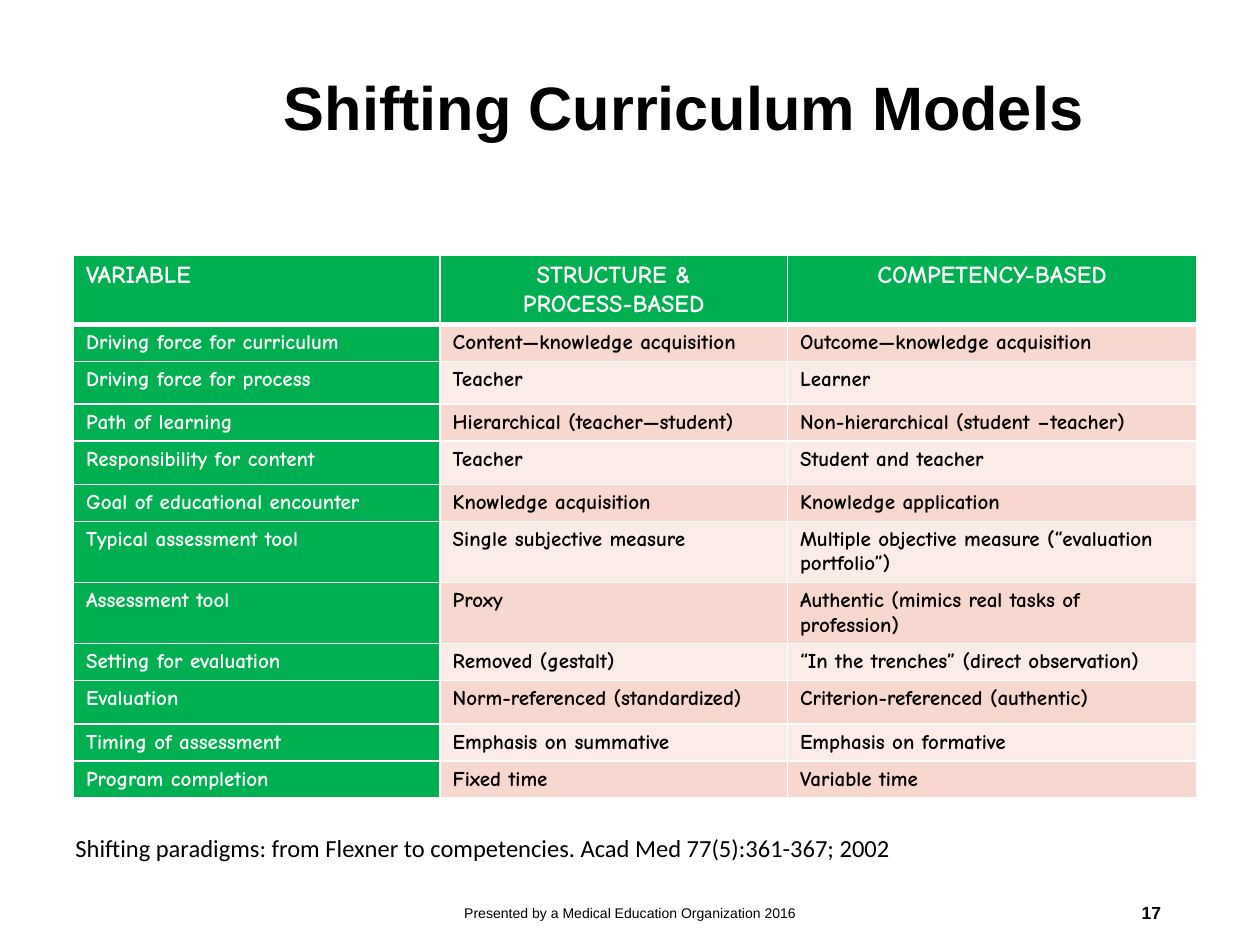
from lxml import etree
from pptx import Presentation
from pptx import util as u
from pptx.dml.color import RGBColor
from pptx.enum import text
from pptx.oxml.ns import qn

Pt = u.Pt
GREEN, WHITE, BLACK = "00B050", "FFFFFF", "000000"
BANDS = ["F8D7CE", "FCECE8"]
COLUMN_WIDTHS = [209.5, 198.5, 234]
ROW_HEIGHTS = [39, 21, 24.5, 21, 25, 21, 35, 34, 21, 25, 21, 21]
ROWS = [
    ("VARIABLE", "STRUCTURE &\nPROCESS-BASED", "COMPETENCY-BASED"),
    ("Driving force for curriculum", "Content—knowledge acquisition", "Outcome—knowledge acquisition"),
    ("Driving force for process", "Teacher", "Learner"),
    ("Path of learning", "Hierarchical (teacher—student)", "Non-hierarchical (student –teacher)"),
    ("Responsibility for content", "Teacher", "Student and teacher"),
    ("Goal of educational encounter", "Knowledge acquisition", "Knowledge application"),
    ("Typical assessment tool", "Single subjective measure",
     "Multiple objective measure (“evaluation portfolio”)"),
    ("Assessment tool", "Proxy", "Authentic (mimics real tasks of profession)"),
    ("Setting for evaluation", "Removed (gestalt)", "“In the trenches” (direct observation)"),
    ("Evaluation", "Norm-referenced (standardized)", "Criterion-referenced (authentic)"),
    ("Timing of assessment", "Emphasis on summative", "Emphasis on formative"),
    ("Program completion", "Fixed time", "Variable time"),
]


def color(value):
    return RGBColor.from_string(value)


def set_all(target, values):
    for name, value in values.items():
        setattr(target, name, value)


def write(frame, words, font, size, shade=BLACK, bold=False, align=text.PP_ALIGN.LEFT, spacing=None):
    frame.text = words
    for para in frame.paragraphs:
        set_all(para, {"alignment": align, "line_spacing": spacing})
        for span in para.runs:
            set_all(span.font, {"name": font, "size": Pt(size), "bold": bold})
            span.font.color.rgb = color(shade)


def place(shape, box):
    set_all(shape, dict(zip(("left", "top", "width", "height"), map(Pt, box))))


def add_title(page, box):
    title = page.shapes.title
    place(title, box)
    set_all(title.text_frame, {"vertical_anchor": text.MSO_ANCHOR.MIDDLE, "word_wrap": True,
                               "auto_size": text.MSO_AUTO_SIZE.NONE})
    write(title.text_frame, "Shifting Curriculum Models", "Arial", 35, bold=True, spacing=0.9)


def add_border(cell, side, width):
    properties = cell._tc.get_or_add_tcPr()
    line = etree.Element(qn(f"a:{side}"), w=str(Pt(width)))
    fill = etree.SubElement(line, qn("a:solidFill"))
    etree.SubElement(fill, qn("a:srgbClr"), val=WHITE)
    properties.append(line)


def style_cell(cell, words, row, column):
    header = row == 0
    for side in ("lnL", "lnR", "lnT", "lnB"):
        add_border(cell, side, 3 if header and side == "lnB" else 1)
    cell.fill.solid()
    green = header or column == 0
    cell.fill.fore_color.rgb = color(GREEN if green else BANDS[(row - 1) % 2])
    centred = header and column > 0
    write(cell.text_frame, words, "Comic Neue", 14 if header else 12, WHITE if green else BLACK,
          True, text.PP_ALIGN.CENTER if centred else text.PP_ALIGN.LEFT)


def add_comparison(page, left, top):
    frame = page.shapes.add_table(len(ROWS), len(COLUMN_WIDTHS), Pt(left), Pt(top),
                                  Pt(sum(COLUMN_WIDTHS)), Pt(sum(ROW_HEIGHTS)))
    table = frame.table
    for column, width in zip(table.columns, COLUMN_WIDTHS):
        column.width = Pt(width)
    for row, height in zip(table.rows, ROW_HEIGHTS):
        row.height = Pt(height)
    for row, entries in enumerate(ROWS):
        for column, words in enumerate(entries):
            style_cell(table.cell(row, column), words, row, column)


def add_text(page, box, words, font, size, wrap=True, anchor=text.MSO_ANCHOR.MIDDLE, **style):
    shape = page.shapes.add_textbox(*map(Pt, box))
    set_all(shape.text_frame, {"word_wrap": wrap, "vertical_anchor": anchor})
    write(shape.text_frame, words, font, size, **style)
    return shape


def add_citation(page, box):
    shape = add_text(page, box, "Shifting paradigms: from Flexner to competencies. Acad Med 77(5):361-367; 2002",
                     "Calibri", 14, wrap=False, anchor=text.MSO_ANCHOR.TOP)
    shape.text_frame.auto_size = text.MSO_AUTO_SIZE.SHAPE_TO_FIT_TEXT


def add_footer(page, left, top, height):
    add_text(page, (left, top, 243.5, height), "Presented by a Medical Education Organization 2016",
             "Arial", 8, align=text.PP_ALIGN.CENTER)
    add_text(page, (left + 270, top, 162, height), "17", "Arial", 10, bold=True,
             align=text.PP_ALIGN.RIGHT)


def main():
    deck = Presentation()
    set_all(deck, {"slide_width": Pt(720), "slide_height": Pt(540)})
    page = deck.slides.add_slide(deck.slide_layouts[5])
    add_title(page, (155, 36, 529, 54))
    add_comparison(page, 42, 146)
    add_citation(page, (36, 472.5, 492, 24.5))
    add_footer(page, 238.5, 507, 29)
    deck.save("out.pptx")


if __name__ == "__main__":
    main()
